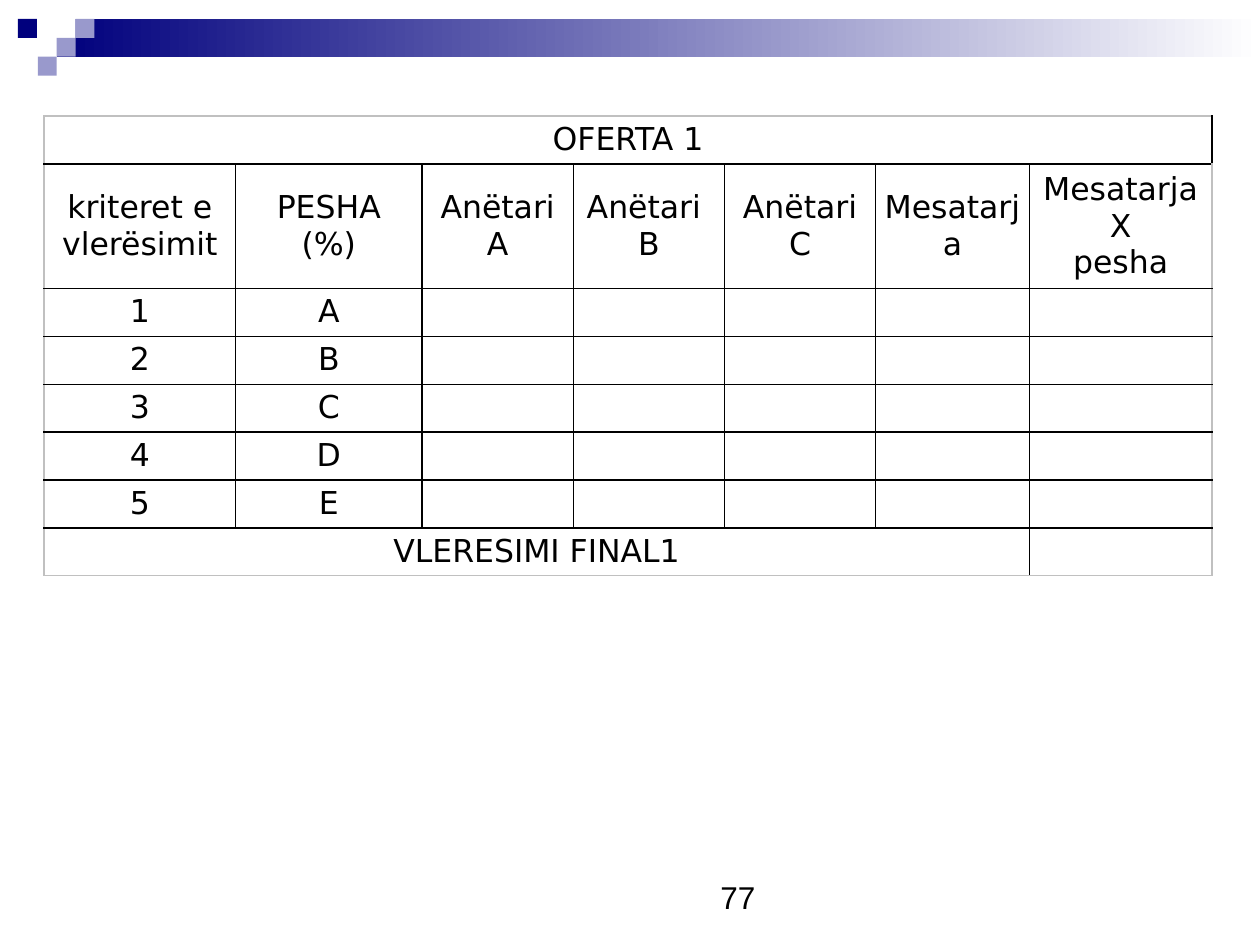
"""Build the bid evaluation slide: a checkered banner, a scoring table and a page number."""
from lxml.etree import SubElement
from pptx import Presentation
from pptx.dml.color import RGBColor
from pptx.enum.shapes import MSO_SHAPE
from pptx.enum.text import MSO_ANCHOR, PP_ALIGN
from pptx.oxml.ns import qn
from pptx.util import Inches, Pt

NAVY = RGBColor(0x00, 0x00, 0x7D)
LAVENDER = RGBColor(0x99, 0x99, 0xCC)
WHITE = RGBColor(0xFF, 0xFF, 0xFF)
BLACK = RGBColor(0x00, 0x00, 0x00)
GREY = RGBColor(0xC0, 0xC0, 0xC0)

WIDTH, HEIGHT = 10, 7.5
UNIT = 0.15
SQUARES = [(3, 1, WHITE), (4, 1, LAVENDER), (0.95, 1, NAVY), (3, 2, LAVENDER), (2, 3, LAVENDER)]

TITLE = "OFERTA 1"
HEADINGS = ["kriteret e vlerësimit", "PESHA\n(%)", "Anëtari Α", "Anëtari \vΒ", "Anëtari C",
            "Mesatarja", "Mesatarja\nΧ\npesha"]
WEIGHTS = ["Α", "Β", "C", "D", "Ε"]
TOTAL = "VLERESIMI FINAL1"
PAGE_NUMBER = "77"

COLUMNS = [1.52, 1.48, 1.2, 1.2, 1.2, 1.22, 1.45]
ROW, HEADING_ROW = 0.38, 0.99
TABLE_LEFT, TABLE_TOP = 0.35, 0.92
CELL_FORMAT = {f"margin_{side}": Inches(0.04) for side in ("left", "right", "top", "bottom")}
TABLE_FONT = {"name": "DejaVu Sans", "size": Pt(18)}
NUMBER_FONT = {"name": "Arial", "size": Pt(18)}


def apply(target, values):
    for name, value in values.items():
        setattr(target, name, value)


def style_font(font, values):
    apply(font, values)
    font.color.rgb = BLACK


def add_block(page, left, top, width, height):
    block = page.shapes.add_shape(MSO_SHAPE.RECTANGLE, *map(Inches, (left, top, width, height)))
    block.shadow.inherit = False
    block.line.fill.background()
    return block


def add_banner(page):
    bar = add_block(page, 3 * UNIT, UNIT, WIDTH - 3 * UNIT, 2 * UNIT)
    bar.fill.gradient()
    bar.fill.gradient_angle = 0
    for stop, color, position in zip(bar.fill.gradient_stops, (NAVY, WHITE), (0, 1)):
        stop.color.rgb = color
        stop.position = position
    for column, row, color in SQUARES:
        square = add_block(page, column * UNIT, row * UNIT, UNIT, UNIT)
        square.fill.solid()
        square.fill.fore_color.rgb = color


def add_borders(cell, edges):
    properties = cell._tc.get_or_add_tcPr()
    for index, (side, outer) in enumerate(edges.items()):
        line = properties.makeelement(qn(f"a:{side}"), {"w": str(Pt(1))})
        fill = SubElement(line, qn("a:solidFill"))
        SubElement(fill, qn("a:srgbClr"), val=str(GREY if outer else BLACK))
        properties.insert(index, line)


def add_score_table(page):
    count = len(COLUMNS)
    rows = [[TITLE], HEADINGS]
    rows += [[str(number), weight] for number, weight in enumerate(WEIGHTS, 1)]
    rows.append([TOTAL])
    heights = [HEADING_ROW if texts is HEADINGS else ROW for texts in rows]
    frame = page.shapes.add_table(len(rows), count, Inches(TABLE_LEFT), Inches(TABLE_TOP),
                                  Inches(sum(COLUMNS)), Inches(sum(heights)))
    table = frame.table
    table.first_row = table.horz_banding = False
    for column, width in zip(table.columns, COLUMNS):
        column.width = Inches(width)
    last_row, last_column = len(rows) - 1, count - 1
    table.cell(0, 0).merge(table.cell(0, last_column))
    table.cell(last_row, 0).merge(table.cell(last_row, last_column - 1))
    for r, texts in enumerate(rows):
        table.rows[r].height = Inches(heights[r])
        for c in range(count):
            cell = table.cell(r, c)
            apply(cell, CELL_FORMAT)
            cell.vertical_anchor = MSO_ANCHOR.MIDDLE if r < 2 else MSO_ANCHOR.TOP
            cell.fill.background()
            add_borders(cell, {"lnL": c == 0, "lnR": c == last_column,
                               "lnT": r == 0, "lnB": r == last_row})
            if c < len(texts):
                cell.text = texts[c]
            for paragraph in cell.text_frame.paragraphs:
                paragraph.alignment = PP_ALIGN.CENTER
                style_font(paragraph.font, TABLE_FONT)
                for span in paragraph.runs:
                    style_font(span.font, TABLE_FONT)


def add_page_number(page):
    box = page.shapes.add_textbox(Inches(5.62), Inches(6.92), Inches(0.64), Inches(0.4))
    box.text_frame.word_wrap = False
    span = box.text_frame.paragraphs[0].add_run()
    span.text = PAGE_NUMBER
    style_font(span.font, NUMBER_FONT)


def main():
    deck = Presentation()
    deck.slide_width, deck.slide_height = Inches(WIDTH), Inches(HEIGHT)
    page = deck.slides.add_slide(deck.slide_layouts[6])
    add_banner(page)
    add_page_number(page)
    add_score_table(page)
    deck.save("out.pptx")


if __name__ == "__main__":
    main()
